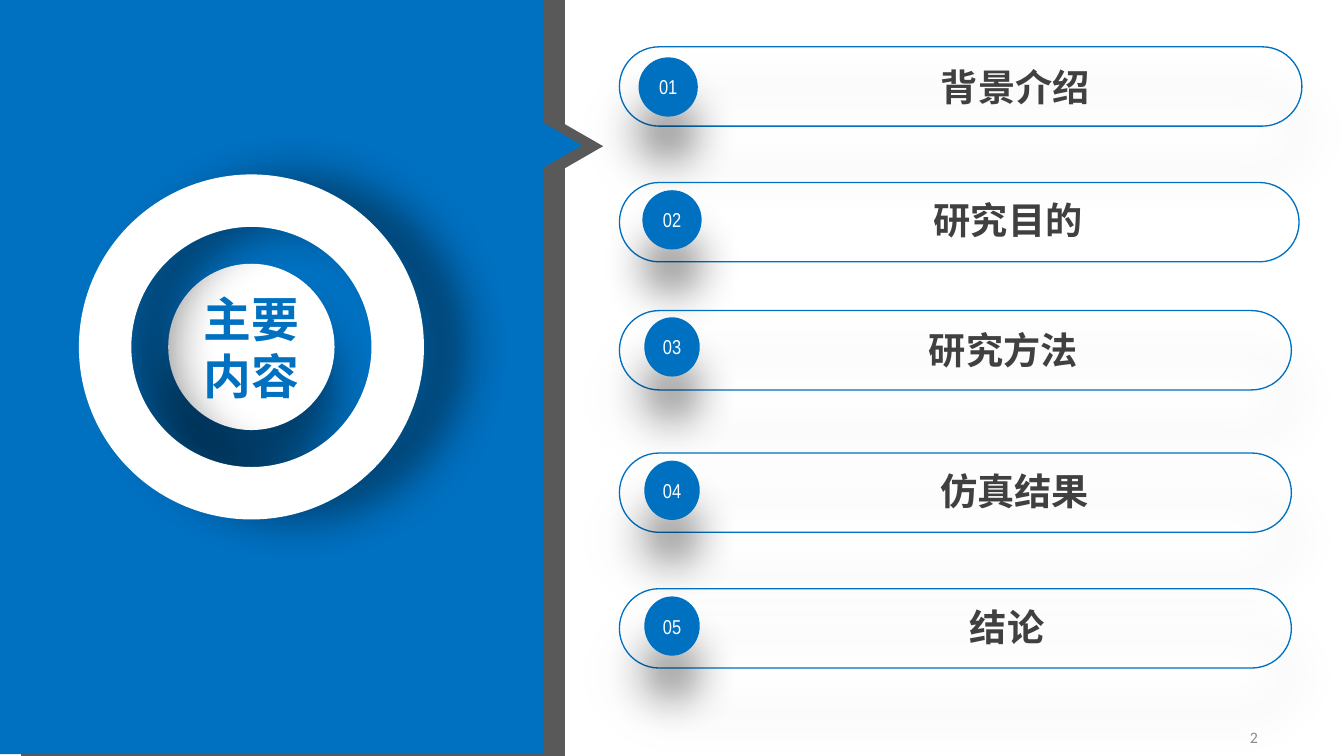
"""Build the agenda slide: a blue title panel beside five numbered pills."""
from lxml import etree
from pptx import Presentation
from pptx import util as u
from pptx.dml.color import RGBColor
from pptx.enum import shapes, text
from pptx.oxml import ns

WIDTH, HEIGHT = 14.06, 7.91
BLUE, GREY, WHITE, INK, PALE = "0070C0", "595959", "FFFFFF", "404040", "8C8C8C"
TITLE = "主要内容"
PAGE_NUMBER = "2"

PILL_LEFT, PILL_HEIGHT, DOT_HEIGHT, LABEL_HEIGHT = 6.48, 0.83, 0.62, 0.47
# label, pill top, pill width, dot (left, drop, width), label (left, drop, width), pill shadow
TOPICS = [
    ("背景介绍", 0.49, 7.14, (6.68, 0.11, 0.62), (7.62, 0.18, 6.0), True),
    ("研究目的", 1.91, 7.11, (6.72, 0.08, 0.62), (8.07, 0.15, 4.95), False),
    ("研究方法", 3.25, 7.03, (6.74, 0.07, 0.58), (8.33, 0.17, 4.33), True),
    ("仿真结果", 4.74, 7.03, (6.74, 0.08, 0.58), (8.45, 0.16, 4.33), True),
    ("结论", 6.16, 7.03, (6.74, 0.08, 0.58), (8.37, 0.16, 4.33), True),
]
PANEL_WIDTH = 5.69
PANELS = [(GREY, 0.22, 0, 1.33), (BLUE, 0, -0.02, 1.32)]
POINTER_WIDTH, POINTER_HEIGHT = 0.46, 0.4
CENTRE_X, CENTRE_Y = 2.63, 3.63
DISC, RING, TITLE_SIDE = 1.74, 3.61, 1.23

KIND = shapes.MSO_SHAPE
ALIGN = text.PP_ALIGN


def colour(value):
    return RGBColor.from_string(value)


def centred(size):
    return CENTRE_X - size / 2, CENTRE_Y - size / 2, size, size


def add_shadow(shape, alpha, angle):
    effects = shape._element.spPr.find(ns.qn("a:effectLst"))
    shadow = etree.SubElement(
        effects, ns.qn("a:outerShdw"), blurRad=str(u.Pt(33)), dist=str(u.Pt(33)),
        dir=str(angle * 60000), algn="ctr", rotWithShape="0")
    tint = etree.SubElement(shadow, ns.qn("a:srgbClr"), val="000000")
    etree.SubElement(tint, ns.qn("a:alpha"), val=str(alpha * 1000))


def add_figure(page, kind, frame, fill=None, line=None, adjust=None, shadow=None):
    shape = page.shapes.add_shape(kind, *map(u.Inches, frame))
    shape.shadow.inherit = False
    if fill:
        shape.fill.solid()
        shape.fill.fore_color.rgb = colour(fill)
    else:
        shape.fill.background()
    if line:
        shape.line.color.rgb = colour(line)
        shape.line.width = u.Pt(1)
    else:
        shape.line.fill.background()
    if adjust is not None:
        shape.adjustments[0] = adjust
    if shadow:
        add_shadow(shape, *shadow)
    return shape


def write(shape, words, size, font, ink, bold=False, align=ALIGN.CENTER, insets=(0.08, 0.04)):
    box = shape.text_frame
    box.word_wrap = True
    box.auto_size = text.MSO_AUTO_SIZE.NONE
    box.vertical_anchor = text.MSO_ANCHOR.MIDDLE
    box.margin_left = box.margin_right = u.Inches(insets[0])
    box.margin_top = box.margin_bottom = u.Inches(insets[1])
    para = box.paragraphs[0]
    para.alignment = align
    span = para.add_run()
    span.text = words
    span.font.size = u.Pt(size)
    span.font.name = font
    span.font.bold = bold
    span.font.color.rgb = colour(ink)


def add_topic(page, number, topic):
    label, top, width, dot, caption, shaded = topic
    soft = (43, 90)
    add_figure(page, KIND.ROUNDED_RECTANGLE, (PILL_LEFT, top, width, PILL_HEIGHT),
               line=BLUE, adjust=0.5, shadow=soft if shaded else None)
    left, drop, width = dot
    badge = add_figure(page, KIND.OVAL, (left, top + drop, width, DOT_HEIGHT),
                       fill=BLUE, shadow=soft)
    write(badge, f"{number:02}", 15.1, "Arial Narrow", WHITE)
    left, drop, width = caption
    box = page.shapes.add_textbox(*map(u.Inches, (left, top + drop, width, LABEL_HEIGHT)))
    write(box, label, 28, "Arial", INK, bold=True, insets=(0, 0))


def add_panel(page, fill, left, top, pointer_top):
    pointer_left = left + PANEL_WIDTH - (POINTER_WIDTH - POINTER_HEIGHT) / 2
    pointer = add_figure(page, KIND.ISOSCELES_TRIANGLE,
                         (pointer_left, pointer_top, POINTER_WIDTH, POINTER_HEIGHT), fill=fill)
    pointer.rotation = 90
    add_figure(page, KIND.RECTANGLE, (left, top, PANEL_WIDTH, HEIGHT), fill=fill)


def add_emblem(page):
    add_figure(page, KIND.OVAL, centred(DISC), fill=WHITE, shadow=(43, 90))
    add_figure(page, KIND.DONUT, centred(RING), fill=WHITE, adjust=0.152, shadow=(40, 0))
    title = page.shapes.title
    title.left, title.top, title.width, title.height = map(u.Inches, centred(TITLE_SIDE))
    write(title, TITLE, 36, "Arial Narrow", BLUE, bold=True)
    title.element.getparent().append(title.element)


def main():
    deck = Presentation()
    deck.slide_width, deck.slide_height = u.Inches(WIDTH), u.Inches(HEIGHT)
    page = deck.slides.add_slide(deck.slide_layouts[5])
    footer = page.shapes.add_textbox(*map(u.Inches, (10.1, 7.5, 3.16, 0.42)))
    write(footer, PAGE_NUMBER, 12, "Calibri", PALE, align=ALIGN.RIGHT, insets=(0.1, 0.05))
    for number, topic in enumerate(TOPICS, 1):
        add_topic(page, number, topic)
    for panel in PANELS:
        add_panel(page, *panel)
    add_emblem(page)
    deck.save("out.pptx")


if __name__ == "__main__":
    main()
